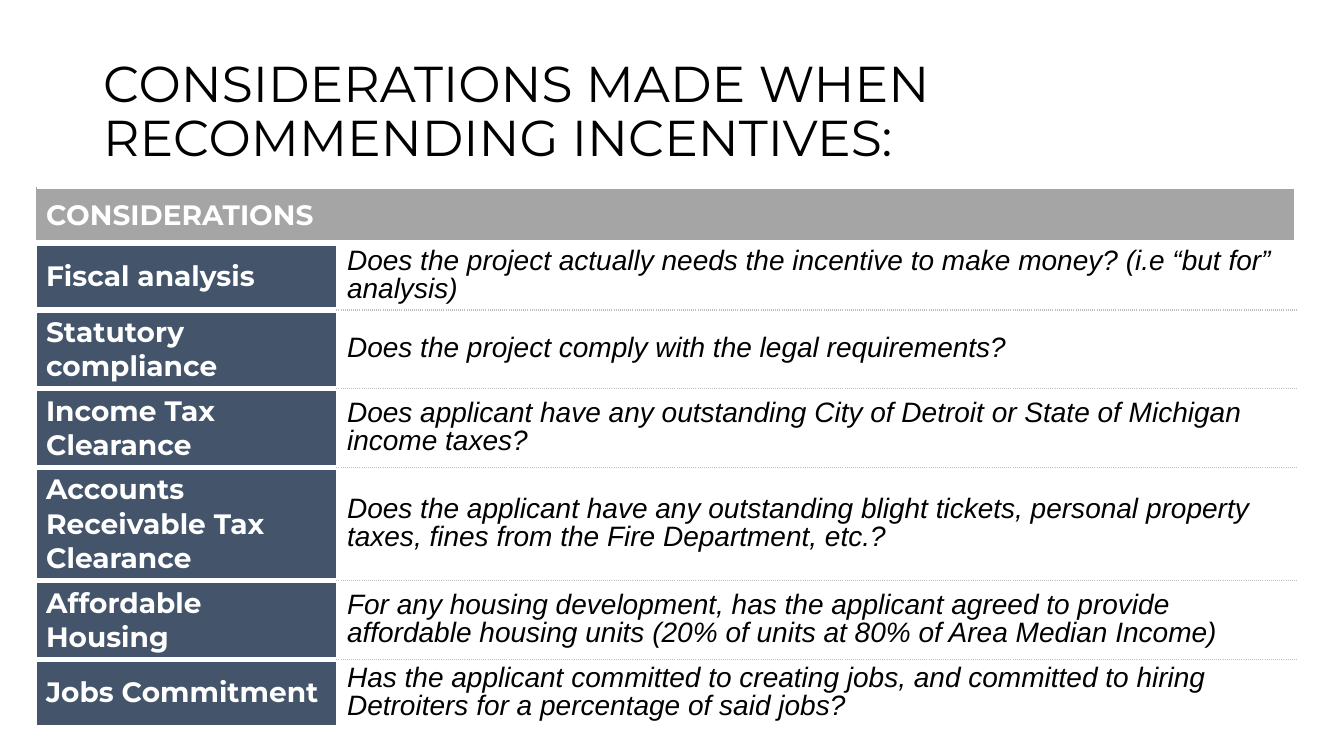
from lxml import etree
from pptx import Presentation
from pptx.dml.color import RGBColor
from pptx.enum.text import MSO_ANCHOR, MSO_AUTO_SIZE, PP_ALIGN
from pptx.oxml.ns import qn
from pptx.util import Emu, Pt

MIDDLE = MSO_ANCHOR.MIDDLE
NO_AUTOFIT = MSO_AUTO_SIZE.NONE
LEFT = PP_ALIGN.LEFT
TITLE_ONLY = 5

PX = 914400 / 100.8
SLIDE_SIZE = (1344, 756)

# Border styles: colour, width in points, dash
THIN = ("FFFFFF", 1, "solid")
THICK = ("FFFFFF", 4.5, "solid")
DOTTED = ("BFBFBF", 1, "sysDot")
GREY_EDGE = ("A5A5A5", 0.5, "solid")

HEADING = "CONSIDERATIONS"
CONSIDERATIONS = [
    ("Fiscal analysis", 67,
     "Does the project actually needs the incentive to make money? (i.e “but for” analysis)"),
    ("Statutory compliance", 78,
     "Does the project comply with the legal requirements?"),
    ("Income Tax Clearance", 79,
     "Does applicant have any outstanding City of Detroit or State of Michigan income taxes?"),
    ("Accounts Receivable Tax Clearance", 113,
     "Does the applicant have any outstanding blight tickets, personal property taxes, "
     "fines from the Fire Department, etc.?"),
    ("Affordable Housing", 79,
     "For any housing development, has the applicant agreed to provide affordable housing "
     "units (20% of units at 80% of Area Median Income)"),
    ("Jobs Commitment", 66,
     "Has the applicant committed to creating jobs, and committed to hiring Detroiters "
     "for a percentage of said jobs?"),
]


def px(length):
    return Emu(round(length * PX))


def rgb(colour):
    return RGBColor.from_string(colour)


class Deck:
    title_font = {"name": "Montserrat", "size": Pt(36), "bold": False}
    label_font = {"name": "Montserrat", "size": Pt(20), "bold": True, "italic": False}
    question_font = {"name": "Arial", "size": Pt(20), "bold": False, "italic": True}
    question_spacing = {"line_spacing": 0.9, "space_before": Pt(10)}

    def __init__(self):
        self.presentation = Presentation()
        self.presentation.slide_width, self.presentation.slide_height = map(px, SLIDE_SIZE)
        self.slide = None

    def add_slide(self):
        layout = self.presentation.slide_layouts[TITLE_ONLY]
        self.slide = self.presentation.slides.add_slide(layout)

    def set_text(self, frame, text, font, colour, spacing):
        paragraph = frame.paragraphs[0]
        paragraph.alignment = LEFT
        run = paragraph.add_run()
        run.text = text
        run.font.color.rgb = rgb(colour)
        for target, values in ((run.font, font), (paragraph, spacing)):
            for name, value in values.items():
                setattr(target, name, value)

    def title(self, text, left, top, width, height):
        title = self.slide.shapes.title
        title.left, title.top, title.width, title.height = map(px, (left, top, width, height))
        frame = title.text_frame
        frame.word_wrap = True
        frame.auto_size = NO_AUTOFIT
        frame.vertical_anchor = MIDDLE
        self.set_text(frame, text, self.title_font, "000000", {"line_spacing": 0.9})

    def table(self, left, top, columns, rows):
        frame = self.slide.shapes.add_table(
            len(rows), len(columns), *map(px, (left, top, sum(columns), sum(rows))))
        table = frame.table
        table.horz_banding = False
        for column, width in zip(table.columns, columns):
            column.width = px(width)
        for row, height in zip(table.rows, rows):
            row.height = px(height)
        return table

    def cell(self, cell, text, font, colour, fill, borders, spacing):
        cell.vertical_anchor = MIDDLE
        self.borders(cell, borders)
        cell.fill.solid()
        cell.fill.fore_color.rgb = rgb(fill)
        if text:
            self.set_text(cell.text_frame, text, font, colour, spacing)

    def label(self, cell, text, fill, borders):
        self.cell(cell, text, self.label_font, "FFFFFF", fill, borders, {})

    def question(self, cell, text, borders):
        self.cell(cell, text, self.question_font, "000000", "FFFFFF", borders,
                  self.question_spacing)

    def borders(self, cell, borders):
        properties = cell._tc.get_or_add_tcPr()
        for side in "LRTB":
            colour, width, dash = borders[side]
            line = etree.SubElement(properties, qn(f"a:ln{side}"), w=str(int(Pt(width))))
            solid = etree.SubElement(line, qn("a:solidFill"))
            etree.SubElement(solid, qn("a:srgbClr"), val=colour)
            etree.SubElement(line, qn("a:prstDash"), val=dash)


def main():
    deck = Deck()
    deck.add_slide()
    deck.title("CONSIDERATIONS MADE WHEN RECOMMENDING INCENTIVES:", 93, 40, 1159, 146)

    # Heading row across both columns
    heights = [55] + [height for _, height, _ in CONSIDERATIONS]
    table = deck.table(36, 188, [301, 960], heights)
    table.cell(0, 0).merge(table.cell(0, 1))
    heading_borders = {"L": GREY_EDGE, "R": THICK, "T": THIN, "B": THICK}
    for column, text in enumerate((HEADING, "")):
        deck.label(table.cell(0, column), text, "A5A5A5", heading_borders)

    # One row for each consideration
    last = len(CONSIDERATIONS)
    for row, (label, _, question) in enumerate(CONSIDERATIONS, 1):
        deck.label(table.cell(row, 0), label, "44546A",
                   {"L": THIN, "R": THIN, "T": THICK, "B": THIN if row == last else THICK})
        deck.question(table.cell(row, 1), question,
                      {"L": THIN, "R": THIN, "T": THICK if row == 1 else DOTTED,
                       "B": THIN if row == last else DOTTED})

    deck.presentation.save("out.pptx")


if __name__ == "__main__":
    main()
